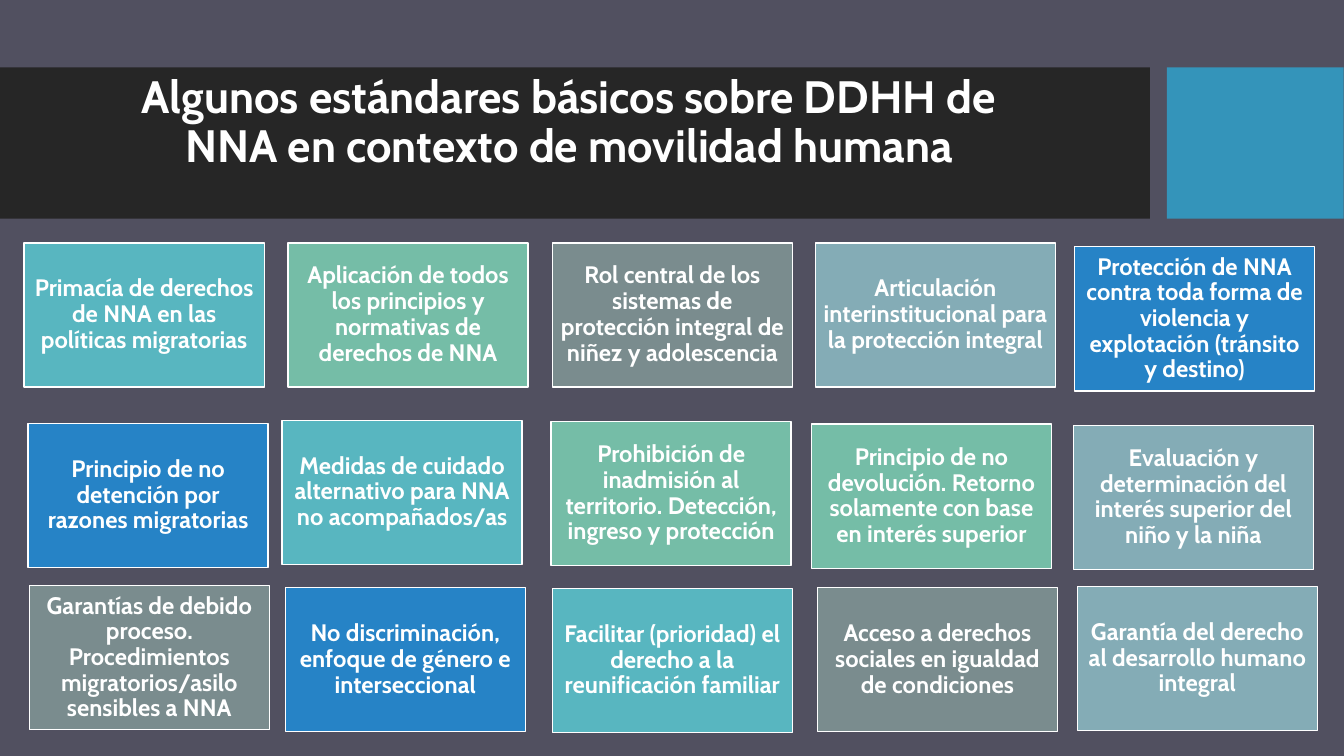
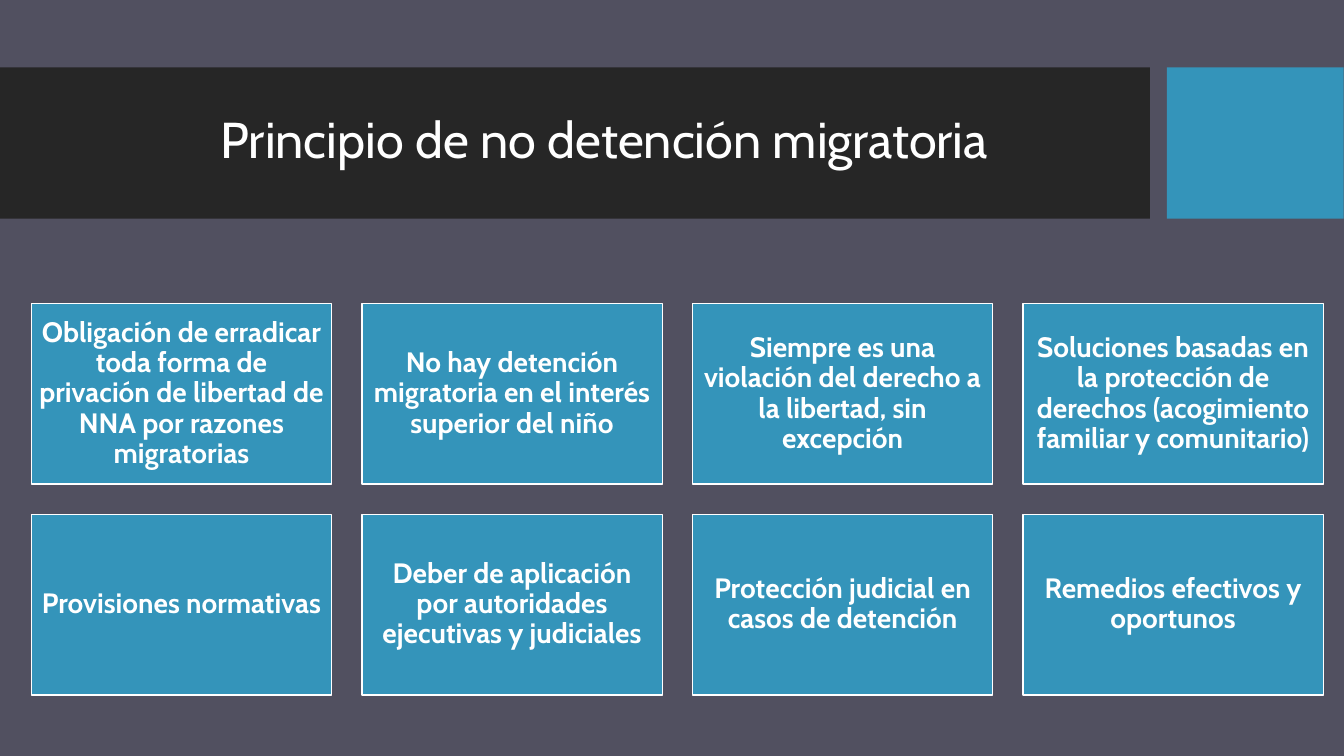
from typing import NamedTuple

from pptx import Presentation
from pptx.dml.color import RGBColor
from pptx.enum import shapes, text
from pptx.util import Cm, Pt

# Shared look
FONT = "Cabin"
WHITE = RGBColor(0xFF, 0xFF, 0xFF)
BACKDROP = RGBColor(0x51, 0x50, 0x60)
BAND = RGBColor(0x26, 0x26, 0x26)
ACCENT = RGBColor(0x34, 0x94, 0xBA)
TEAL = RGBColor(0x58, 0xB6, 0xC0)
GREEN = RGBColor(0x75, 0xBD, 0xA7)
GRAY = RGBColor(0x7A, 0x8C, 0x8E)
MIST = RGBColor(0x84, 0xAC, 0xB6)
BLUE = RGBColor(0x26, 0x83, 0xC6)


class Box(NamedTuple):
    """Left, top, width and height in centimetres."""
    left: float
    top: float
    width: float
    height: float

    def lengths(self) -> list:
        return [Cm(value) for value in self]


class Standard(NamedTuple):
    left: float
    top: float
    fill: RGBColor
    wording: str


# Slide 1: standards, row by row, in hand-placed positions
STANDARD_WIDTH, STANDARD_HEIGHT = 6.05, 3.63
STANDARDS = [
    Standard(0.61, 6.12, TEAL, "Primacía de derechos de NNA en las políticas migratorias"),
    Standard(7.26, 6.12, GREEN,
             "Aplicación de todos los principios y normativas de derechos de NNA"),
    Standard(13.92, 6.12, GRAY,
             "Rol central de los sistemas de protección integral de niñez y adolescencia"),
    Standard(20.55, 6.12, MIST, "Articulación interinstitucional para la protección integral"),
    Standard(27.08, 6.22, BLUE,
             "Protección de NNA contra toda forma de violencia y explotación (tránsito y destino)"),
    Standard(0.71, 10.67, BLUE, "Principio de no detención por razones migratorias"),
    Standard(7.11, 10.59, TEAL, "Medidas de cuidado alternativo para NNA no acompañados/as"),
    Standard(13.89, 10.62, GREEN,
             "Prohibición de inadmisión al territorio. Detección, ingreso y protección"),
    Standard(20.45, 10.69, GREEN,
             "Principio de no devolución. Retorno solamente con base en interés superior"),
    Standard(27.05, 10.72, MIST,
             "Evaluación y determinación del interés superior del niño y la niña"),
    Standard(0.74, 14.76, GRAY,
             "Garantías de debido proceso. Procedimientos migratorios/asilo sensibles a NNA"),
    Standard(7.19, 14.81, BLUE, "No discriminación, enfoque de género e interseccional"),
    Standard(13.92, 14.83, TEAL, "Facilitar (prioridad) el derecho a la reunificación familiar"),
    Standard(20.6, 14.81, GRAY, "Acceso a derechos sociales en igualdad de condiciones"),
    Standard(27.15, 14.78, MIST, "Garantía del derecho al desarrollo humano integral"),
]

# Slide 2: implications of the principle, in a regular grid
GRID = Box(0.79, 7.65, 7.57, 4.55)
GRID_COLUMNS = 4
GRID_GAP = 0.76
IMPLICATIONS = [
    "Obligación de erradicar toda forma de privación de libertad de NNA por razones migratorias",
    "No hay detención migratoria en el interés superior del niño",
    "Siempre es una violación del derecho a la libertad, sin excepción",
    "Soluciones basadas en la protección de derechos (acogimiento familiar y comunitario)",
    "Provisiones normativas",
    "Deber de aplicación por autoridades ejecutivas y judiciales",
    "Protección judicial en casos de detención",
    "Remedios efectivos y oportunos",
]


def write(shape, wording: str, *, size: float, bold: bool = True, inset: float = 0.18) -> None:
    """Fill a shape with one centred paragraph."""
    frame = shape.text_frame
    frame.word_wrap = True
    frame.vertical_anchor = text.MSO_ANCHOR.MIDDLE
    frame.margin_left = frame.margin_right = Cm(inset)
    frame.margin_top = frame.margin_bottom = Cm(inset)
    paragraph = frame.paragraphs[0]
    paragraph.text = wording
    paragraph.alignment = text.PP_ALIGN.CENTER
    paragraph.line_spacing = 0.9
    font = paragraph.font
    font.name, font.size, font.bold = FONT, Pt(size), bold
    font.color.rgb = WHITE


def add_block(slide, box: Box, fill: RGBColor, outlined: bool = False):
    block = slide.shapes.add_shape(shapes.MSO_SHAPE.RECTANGLE, *box.lengths())
    block.shadow.inherit = False
    block.fill.solid()
    block.fill.fore_color.rgb = fill
    if outlined:
        block.line.color.rgb = WHITE
        block.line.width = Pt(1)
    else:
        block.line.fill.background()
    return block


def add_card(slide, box: Box, fill: RGBColor, wording: str, *, size: float, inset: float) -> None:
    write(add_block(slide, box, fill, outlined=True), wording, size=size, inset=inset)


def add_titled_slide(prs, title: str, box: Box, *, size: float, bold: bool):
    """Add a blank slide with the title band and its accent block."""
    slide = prs.slides.add_slide(prs.slide_layouts[6])
    add_block(slide, Box(0, 1.7, 28.98, 3.81), BAND)
    add_block(slide, Box(29.41, 1.7, 4.45, 3.81), ACCENT)
    write(slide.shapes.add_textbox(*box.lengths()), title, size=size, bold=bold)
    return slide


def build_standards(prs) -> None:
    slide = add_titled_slide(
        prs, "Algunos estándares básicos sobre DDHH de\vNNA en contexto de movilidad humana",
        Box(0, 1.8, 28.68, 2.6), size=32.4, bold=True)
    for standard in STANDARDS:
        box = Box(standard.left, standard.top, STANDARD_WIDTH, STANDARD_HEIGHT)
        add_card(slide, box, standard.fill, standard.wording, size=17, inset=0.18)


def build_implications(prs) -> None:
    slide = add_titled_slide(prs, "Principio de no detención migratoria",
                             Box(1.88, 2.08, 26.7, 3), size=36, bold=False)
    for index, implication in enumerate(IMPLICATIONS):
        row, column = divmod(index, GRID_COLUMNS)
        box = GRID._replace(left=GRID.left + column * (GRID.width + GRID_GAP),
                            top=GRID.top + row * (GRID.height + GRID_GAP))
        add_card(slide, box, ACCENT, implication, size=20, inset=0.2)


def main() -> None:
    prs = Presentation()
    prs.slide_width, prs.slide_height = Cm(33.87), Cm(19.05)
    backdrop = prs.slide_master.background.fill
    backdrop.solid()
    backdrop.fore_color.rgb = BACKDROP
    build_standards(prs)
    build_implications(prs)
    prs.save("out.pptx")


if __name__ == "__main__":
    main()
